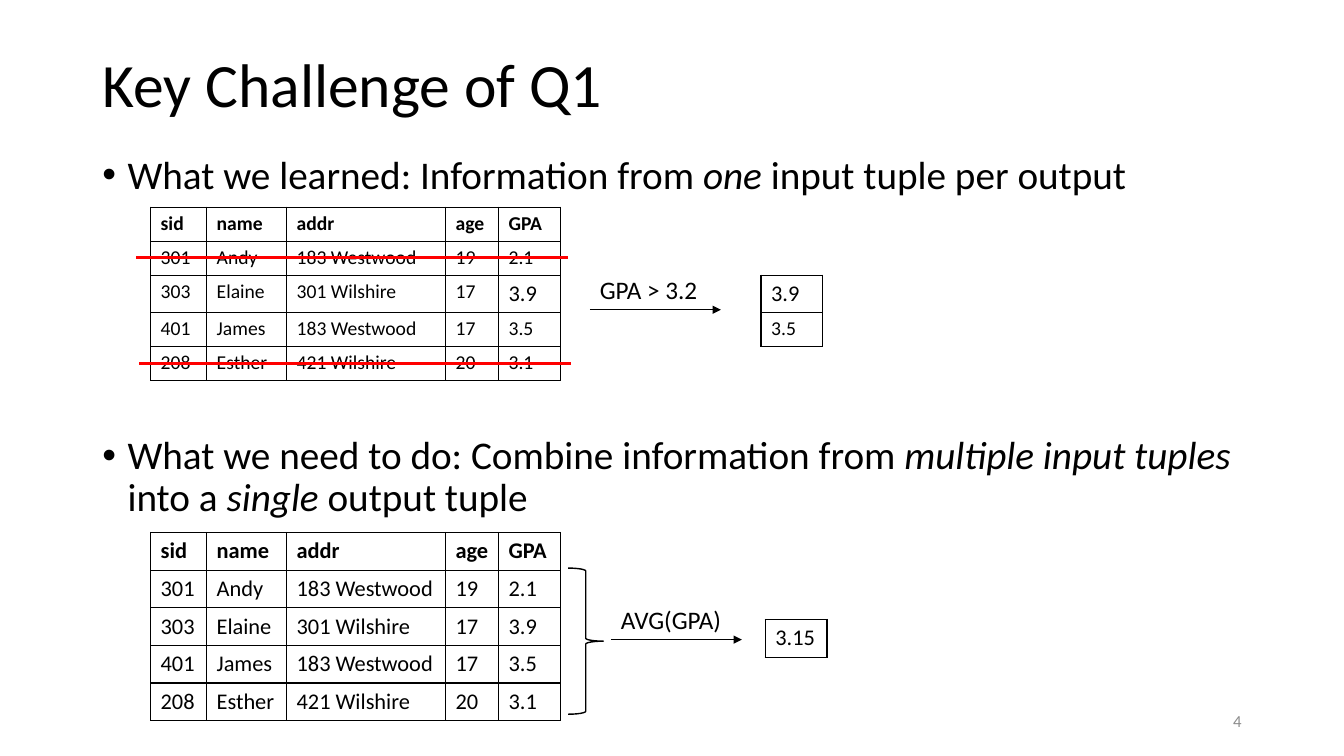
from lxml.etree import SubElement
from pptx import Presentation
from pptx.dml.color import RGBColor
from pptx.enum.shapes import MSO_CONNECTOR, MSO_SHAPE
from pptx.enum.text import MSO_ANCHOR, PP_ALIGN
from pptx.oxml.ns import qn
from pptx.util import Inches, Pt

COLUMNS, ROWS = 160, 90  # grid cells are square
BLACK, RED, GREY = "000000", "FF0000", "8C8C8C"

HEADER = ["sid", "name", "addr", "age", "GPA"]
STUDENTS = [
    ["301", "Andy", "183 Westwood", "19", "2.1"],
    ["303", "Elaine", "301 Wilshire", "17", "3.9"],
    ["401", "James", "183 Westwood", "17", "3.5"],
    ["208", "Esther", "421 Wilshire", "20", "3.1"],
]
FILTERED = [[""], [""], ["3.9"], ["3.5"], [""]]  # lines up with the student rows
STUDENT_WIDTHS = [6.67, 9.52, 18.93, 6.31, 7.35]
GPA_WIDTH = STUDENT_WIDTHS[-1:]
LEARNED = [("What we learned: Information from ", False), ("one", True),
           (" input tuple per output", False)]
NEEDED = [("What we need to do: Combine information from ", False),
          ("multiple input tuples", True), (" into a ", False),
          ("single", True), (" output tuple", False)]


def rgb(color):
    return RGBColor.from_string(color)


class SlideBuilder:
    """Draws on one slide, with all lengths in grid columns and rows."""

    font_name = "Calibri"

    def __init__(self, presentation):
        self.column = presentation.slide_width / COLUMNS
        self.row = presentation.slide_height / ROWS
        self.slide = presentation.slides.add_slide(presentation.slide_layouts[6])
        self.shapes = self.slide.shapes

    def place(self, x, y, *size):
        """Turn grid x, y and optional width, height into slide lengths."""
        steps = (self.column, self.row) * 2
        return [round(value * step) for value, step in zip((x, y, *size), steps)]

    def style(self, paragraph, size, color=BLACK, bold=False):
        font = paragraph.font
        font.name, font.size, font.bold = self.font_name, Pt(size), bold
        font.color.rgb = rgb(color)

    def text(self, content, x, y, width, height, size, color=BLACK,
             align=PP_ALIGN.LEFT, anchor=MSO_ANCHOR.TOP, wrap=True):
        frame = self.shapes.add_textbox(*self.place(x, y, width, height)).text_frame
        frame.word_wrap = wrap
        frame.vertical_anchor = anchor
        paragraph = frame.paragraphs[0]
        paragraph.text = content
        paragraph.alignment = align
        self.style(paragraph, size, color)
        return paragraph

    def bullets(self, items, x, y, width, height, size, gap):
        """Write bulleted items, each a list of (words, italic)."""
        frame = self.shapes.add_textbox(*self.place(x, y, width, height)).text_frame
        frame.word_wrap = True
        for index, item in enumerate(items):
            paragraph = frame.add_paragraph() if index else frame.paragraphs[0]
            paragraph.line_spacing = 0.9
            paragraph.space_before = Pt(gap if index else 0)
            self.style(paragraph, size)
            for words, italic in item:
                run = paragraph.add_run()
                run.text, run.font.italic = words, italic
            properties = paragraph._p.get_or_add_pPr()
            properties.set("marL", str(Inches(0.25)))
            properties.set("indent", str(-Inches(0.25)))
            bullet_font = properties.makeelement(qn("a:buFont"), {"typeface": "Arial"})
            bullet = properties.makeelement(qn("a:buChar"), {"char": "•"})
            default_font = properties.find(qn("a:defRPr"))
            default_font.addprevious(bullet_font)
            default_font.addprevious(bullet)

    def table(self, records, x, y, widths, size, header=False, special_sizes=None):
        """Draw a table with borders around filled cells.

        special_sizes maps (row, column) to a text size.
        """
        row_height = 4.05 if size == 14 else 4.48
        frame = self.shapes.add_table(
            len(records), len(widths),
            *self.place(x, y, sum(widths), row_height * len(records)))
        table = frame.table
        table.first_row = table.horz_banding = False
        for column, width in zip(table.columns, widths):
            column.width = round(width * self.column)
        for r, record in enumerate(records):
            table.rows[r].height = round(row_height * self.row)
            for c, value in enumerate(record):
                cell = table.cell(r, c)
                paragraph = cell.text_frame.paragraphs[0]
                cell_size = (special_sizes or {}).get((r, c), size)
                if value:
                    paragraph.text = value
                else:
                    SubElement(paragraph._p, qn("a:endParaRPr"), sz=str(cell_size * 100))
                self.style(paragraph, cell_size, bold=header and r == 0)
                above = r > 0 and records[r - 1][c]
                below = r + 1 < len(records) and records[r + 1][c]
                self.cell_borders(cell, lnL=value, lnR=value,
                                  lnT=value or above, lnB=value or below)
                cell.fill.background()

    def cell_borders(self, cell, **sides):
        properties = cell._tc.get_or_add_tcPr()
        for side, visible in sides.items():
            border = SubElement(properties, qn(f"a:{side}"), w=str(Pt(1)))
            if visible:
                fill = SubElement(border, qn("a:solidFill"))
                SubElement(fill, qn("a:srgbClr"), val=BLACK)
            else:
                SubElement(border, qn("a:noFill"))

    def line(self, x, y, length, color, weight, arrow=False):
        """Draw a horizontal line, with an arrowhead at its right if asked."""
        connector = self.shapes.add_connector(
            MSO_CONNECTOR.STRAIGHT, *self.place(x, y, x + length, y))
        connector.line.color.rgb = rgb(color)
        connector.line.width = Pt(weight)
        properties = connector._element.spPr
        if arrow:
            SubElement(properties.find(qn("a:ln")), qn("a:tailEnd"), type="triangle")
        SubElement(properties, qn("a:effectLst"))

    def operation(self, label, x, y):
        """Draw an arrow with its label above."""
        self.line(x, y + 4.8, 15.6, BLACK, 0.5, arrow=True)
        self.text(label, x, y, 14.4, 4.8, 18, wrap=False)

    def brace(self, x, y, width, height):
        brace = self.shapes.add_shape(
            MSO_SHAPE.RIGHT_BRACE, *self.place(x, y, width, height))
        brace.shadow.inherit = False
        brace.fill.background()
        brace.line.color.rgb = rgb(BLACK)
        brace.line.width = Pt(1)


def main():
    presentation = Presentation()
    presentation.slide_width = Inches(13.33)
    presentation.slide_height = Inches(7.5)
    builder = SlideBuilder(presentation)

    title = builder.text("Key Challenge of Q1", 11, 4.7, 138, 11.4, 44,
                         anchor=MSO_ANCHOR.MIDDLE)
    title.line_spacing = 0.9
    builder.bullets([LEARNED, NEEDED], 11, 17.9, 138, 65.6, size=28, gap=170)

    # Filtering: each output comes from one tuple
    students = [HEADER, *STUDENTS]
    builder.table(students, 17.93, 24.67, STUDENT_WIDTHS, 14, header=True,
                  special_sizes={(2, 4): 16})
    builder.operation("GPA > 3.2", 70.22, 32.07)
    builder.table(FILTERED, 90.6, 24.67, GPA_WIDTH, 14, special_sizes={(2, 0): 16})
    for strike_x, strike_y in ((16.2, 30.7), (16.55, 43.3)):
        builder.line(strike_x, strike_y, 51.45, RED, 2.25)

    # Aggregation: one output comes from all tuples
    builder.table(students, 17.93, 63.4, STUDENT_WIDTHS, 16, header=True)
    builder.brace(67.63, 67.63, 4.2, 17.4)
    builder.operation("AVG(GPA)", 72.73, 71.35)
    builder.table([["3.15"]], 91.1, 73.75, GPA_WIDTH, 16)

    builder.text("4", 113, 83.4, 36, 4.8, 12, GREY, PP_ALIGN.RIGHT, MSO_ANCHOR.MIDDLE)
    presentation.save("out.pptx")


if __name__ == "__main__":
    main()
